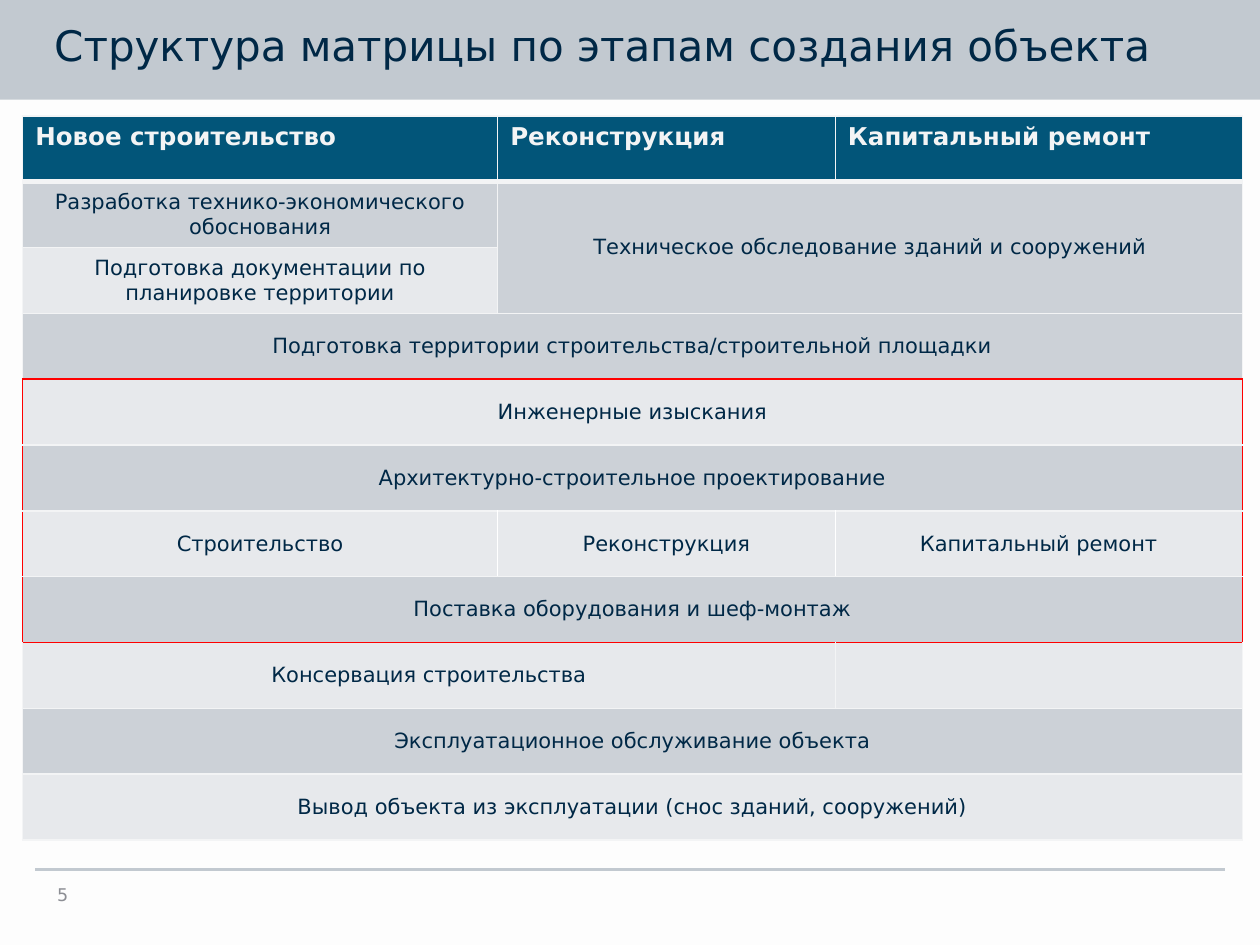
from lxml.etree import SubElement
from pptx import Presentation
from pptx.dml.color import RGBColor
from pptx.enum.shapes import MSO_CONNECTOR, MSO_SHAPE
from pptx.enum.text import MSO_ANCHOR, PP_ALIGN
from pptx.oxml.ns import qn
from pptx.util import Inches, Pt

FONT = "DejaVu Sans"
COLORS = {
    "background": "FDFDFD",
    "band": "C2C9D0",
    "text": "002846",
    "number": "8C8E94",
    "header": "025579",
    "dark": "CCD1D7",
    "light": "E7E9EC",
    "border": "F3F4F5",
    "divider": "FFFFFF",
    "frame": "FF0000",
}


def add_span(para, text, size, color, bold=False):
    span = para.add_run()
    span.text = text
    span.font.name = FONT
    span.font.size = Pt(size)
    span.font.bold = bold
    span.font.color.rgb = RGBColor.from_string(COLORS[color])


def add_border(cell, side, color, width):
    line = SubElement(cell._tc.get_or_add_tcPr(), qn(f"a:ln{side}"), w=str(Pt(width)))
    fill = SubElement(line, qn("a:solidFill"))
    SubElement(fill, qn("a:srgbClr"), val=COLORS[color])


deck = Presentation()
deck.slide_width = Inches(10)
deck.slide_height = Inches(7.5)
page = deck.slides.add_slide(deck.slide_layouts[5])
page.background.fill.solid()
page.background.fill.fore_color.rgb = RGBColor.from_string(COLORS["background"])

band = page.shapes.add_shape(MSO_SHAPE.RECTANGLE, 0, 0, Inches(10), Inches(0.79))
band.shadow.inherit = False
band.fill.solid()
band.fill.fore_color.rgb = RGBColor.from_string(COLORS["band"])
band.line.fill.background()

rule = page.shapes.add_connector(
    MSO_CONNECTOR.STRAIGHT, Inches(0.28), Inches(6.9), Inches(9.72), Inches(6.9)
)
rule.line.width = Pt(1.5)
rule.line.color.rgb = RGBColor.from_string(COLORS["band"])
SubElement(rule._element.spPr, qn("a:effectLst"))

title = page.shapes.title
title.element.getparent().append(title.element)
title.left, title.top = Inches(0), Inches(-0.01)
title.width, title.height = Inches(10), Inches(0.79)
frame = title.text_frame
frame.word_wrap = True
frame.vertical_anchor = MSO_ANCHOR.MIDDLE
frame.margin_left = frame.margin_right = Inches(0.04)
frame.margin_top = frame.margin_bottom = Inches(0.04)
para = frame.paragraphs[0]
para.alignment = PP_ALIGN.LEFT
para.line_spacing = 0.85
properties = para._p.get_or_add_pPr()
properties.set("marL", str(Inches(0.39)))
properties.set("indent", "0")
add_span(para, "Структура матрицы по этапам создания объекта", 24, "text")

box = page.shapes.add_textbox(Inches(0.2), Inches(6.98), Inches(0.44), Inches(0.24))
box.text_frame.word_wrap = True
box.text_frame.vertical_anchor = MSO_ANCHOR.MIDDLE
para = box.text_frame.paragraphs[0]
para.alignment = PP_ALIGN.RIGHT
add_span(para, "5", 10, "number")

stages = [
    ["Новое строительство", "Реконструкция", "Капитальный ремонт"],
    ["Разработка технико-экономического обоснования",
     "Техническое обследование зданий и сооружений", ""],
    ["Подготовка документации по планировке территории", "", ""],
    ["Подготовка территории строительства/строительной площадки", "", ""],
    ["Инженерные изыскания", "", ""],
    ["Архитектурно-строительное проектирование", "", ""],
    ["Строительство", "Реконструкция", "Капитальный ремонт"],
    ["Поставка оборудования и шеф-монтаж", "", ""],
    ["Консервация строительства", "", ""],
    ["Эксплуатационное обслуживание объекта", "", ""],
    ["Вывод объекта из эксплуатации (снос зданий, сооружений)", "", ""],
]
merges = [((1, 1), (2, 2)), ((8, 0), (8, 1))]
merges += [((row, 0), (row, 2)) for row in (3, 4, 5, 7, 9, 10)]
FIRST_FRAMED, LAST_FRAMED = 4, 7

table = page.shapes.add_table(
    len(stages), 3, Inches(0.18), Inches(0.92), Inches(9.68), Inches(5.75)
).table
for column, width in zip(table.columns, (3.77, 2.68, 3.23)):
    column.width = Inches(width)
for start, end in merges:
    table.cell(*start).merge(table.cell(*end))

for row, texts in enumerate(stages):
    framed = FIRST_FRAMED <= row <= LAST_FRAMED
    fill = "header" if row == 0 else "dark" if row % 2 else "light"
    inner = "divider" if row == 6 else "border"
    top = "frame" if row in (FIRST_FRAMED, LAST_FRAMED + 1) else "border"
    bottom = "frame" if row in (FIRST_FRAMED - 1, LAST_FRAMED) else "border"
    for col, text in enumerate(texts):
        cell = table.cell(row, col)
        last = col + cell.span_width - 1 if cell.is_merge_origin else col
        add_border(cell, "L", "frame" if framed and col == 0 else inner, 1)
        add_border(cell, "R", "frame" if framed and last == 2 else inner, 1)
        add_border(cell, "T", top, 3 if row == 1 else 1)
        add_border(cell, "B", bottom, 3 if row == 0 else 1)
        cell.fill.solid()
        cell.fill.fore_color.rgb = RGBColor.from_string(COLORS[fill])
        para = cell.text_frame.paragraphs[0]
        if row == 0:
            add_span(para, text, 14, "border", bold=True)
        else:
            cell.vertical_anchor = MSO_ANCHOR.MIDDLE
            para.alignment = PP_ALIGN.CENTER
            if text:
                add_span(para, text, 12, "text")

deck.save("out.pptx")
